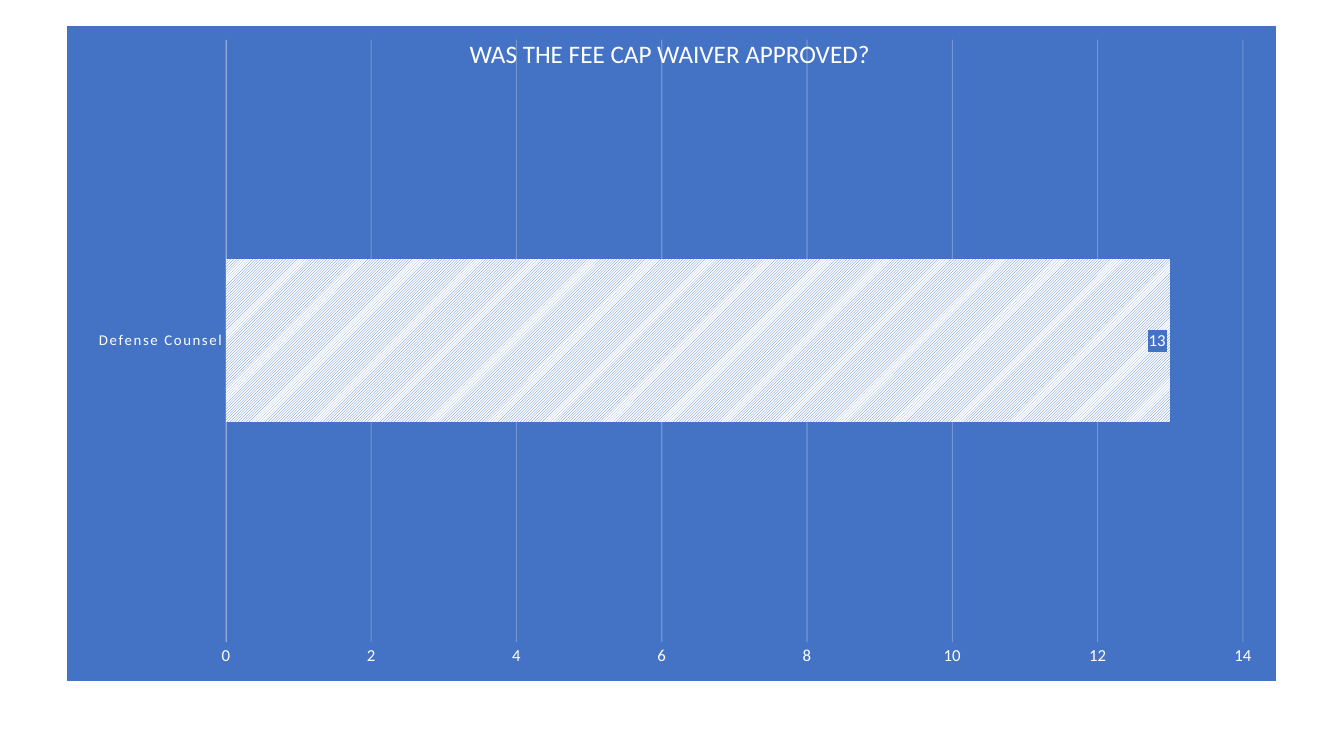
import pptx
import pptx.util
import pptx.chart.data
import pptx.dml.color
import pptx.enum.chart
import pptx.enum.dml
import pptx.enum.text
import pptx.oxml
import pptx.oxml.ns

Pt = pptx.util.Pt
C = {"blue": "4472C4", "pale": "8FAADC", "white": "FFFFFF"}
NS = pptx.oxml.ns.nsdecls("c", "a")


def rgb(name):
    return pptx.dml.color.RGBColor.from_string(C[name])


def style(font, size):
    for key, val in {"size": Pt(size), "name": "Calibri", "bold": False}.items():
        setattr(font, key, val)
    font.color.rgb = rgb("white")


prs = pptx.Presentation()
prs.slide_width, prs.slide_height = Pt(960), Pt(540)
slide = prs.slides.add_slide(prs.slide_layouts[5])

# Bar chart
data = pptx.chart.data.CategoryChartData()
data.categories = ["Defense Counsel"]
data.add_series("Series 1", [13])
frame = slide.shapes.add_chart(
    pptx.enum.chart.XL_CHART_TYPE.BAR_CLUSTERED,
    Pt(48), Pt(18.6), Pt(863.5), Pt(468), data)
chart = frame.chart
chart.has_legend = chart.has_title = False
style(chart.font, 10)

# Blue chart area and plot position
root = chart.element
box = (f'<c:spPr {NS}><a:solidFill><a:srgbClr val="{C["blue"]}"/></a:solidFill>'
       f'<a:ln w="9525"><a:solidFill><a:srgbClr val="{C["blue"]}"/></a:solidFill></a:ln></c:spPr>')
root.xpath("c:chart")[0].addnext(pptx.oxml.parse_xml(box))
area = root.xpath("c:chart/c:plotArea")[0]
for old in area.xpath("c:layout"):
    area.remove(old)
marks = "".join(f'<c:{k} val="{v}"/>' for k, v in {
    "layoutTarget": "inner", "xMode": "edge", "yMode": "edge",
    "x": 0.131, "y": 0.02, "w": 0.842, "h": 0.921}.items())
area.insert(0, pptx.oxml.parse_xml(
    f"<c:layout {NS}><c:manualLayout>{marks}</c:manualLayout></c:layout>"))

# Axes
cat, val = chart.category_axis, chart.value_axis
for axis, size in ((cat, 10.6), (val, 12)):
    axis.major_tick_mark = axis.minor_tick_mark = pptx.enum.chart.XL_TICK_MARK.NONE
    style(axis.tick_labels.font, size)
root.xpath(".//c:catAx/c:txPr//a:defRPr")[0].set("spc", "120")
cat.format.line.color.rgb = rgb("pale")
cat.format.line.width = Pt(0.25)
val.format.line.fill.background()
for key, num in {"minimum_scale": 0, "maximum_scale": 14, "major_unit": 2}.items():
    setattr(val, key, num)
grid = val.major_gridlines.format.line
grid.color.rgb = rgb("white")
grid.width = Pt(0.75)
tint = root.xpath(".//c:majorGridlines//a:srgbClr")[0]
tint.append(pptx.oxml.parse_xml(f'<a:alpha {NS} val="25000"/>'))

# Hatched bar
plot = chart.plots[0]
for key, num in {"gap_width": 269, "overlap": -20, "vary_by_categories": False}.items():
    setattr(plot, key, num)
bar = plot.series[0]
fill = bar.format.fill
fill.patterned()
fill.pattern = pptx.enum.dml.MSO_PATTERN.LIGHT_UPWARD_DIAGONAL
fill.fore_color.rgb = rgb("blue")
fill.back_color.rgb = rgb("white")

# Value label on a blue patch
label = bar.data_labels
label.show_value = True
label.position = pptx.enum.chart.XL_LABEL_POSITION.INSIDE_END
style(label.font, 12)
root.xpath(".//c:ser/c:dLbls/c:txPr")[0].addprevious(pptx.oxml.parse_xml(box))

# Title in front of the chart
title = slide.shapes.title
for key, num in {"left": 328.3, "top": 23.8, "width": 303.1, "height": 28.8}.items():
    setattr(title, key, Pt(num))
frame.element.addnext(title.element)
text = title.text_frame
text.text = "WAS THE FEE CAP WAIVER APPROVED?"
for key, opt in {"word_wrap": False, "margin_left": Pt(7.2), "margin_right": Pt(7.2),
                 "margin_top": Pt(3.6), "margin_bottom": Pt(3.6),
                 "auto_size": pptx.enum.text.MSO_AUTO_SIZE.SHAPE_TO_FIT_TEXT,
                 "vertical_anchor": pptx.enum.text.MSO_ANCHOR.TOP}.items():
    setattr(text, key, opt)
line = text.paragraphs[0]
line.alignment = pptx.enum.text.PP_ALIGN.LEFT
style(line.runs[0].font, 18)

prs.save("out.pptx")
